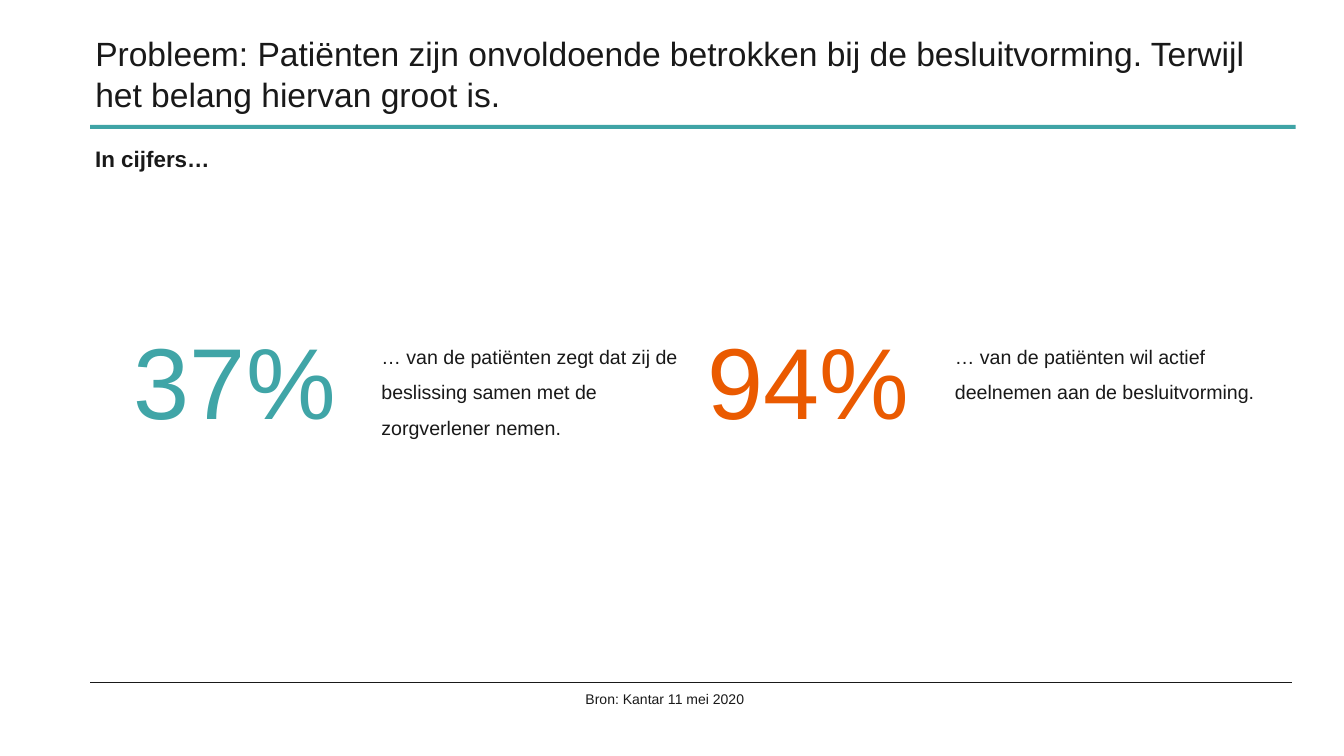
from lxml.etree import SubElement
from pptx import Presentation
from pptx.dml.color import RGBColor
from pptx.enum.shapes import MSO_CONNECTOR, MSO_SHAPE
from pptx.enum.text import MSO_ANCHOR, MSO_AUTO_SIZE, PP_ALIGN
from pptx.oxml.ns import qn
from pptx.util import Inches, Pt

WIDTH, HEIGHT = 26.67, 15
LEFT = 1.79
COLORS = {"ink": "191919", "rule": "3FA4A6", "teal": "40A5A7", "orange": "EA5A00"}
FIGURES = [
    ("37%", "teal", "… van de patiënten zegt dat zij de beslissing samen met de zorgverlener nemen.", 2.84),
    ("94%", "orange", "… van de patiënten wil actief deelnemen aan de besluitvorming.", 2.13),
]
FIGURE_LEFT, FIGURE_STEP, CAPTION_OFFSET = 2.56, 11.38, 4.91


class SlideBuilder:
    """Places styled elements by shares of the slide's width and height."""

    font = "Arial"

    def __init__(self, presentation):
        self.width, self.height = presentation.slide_width, presentation.slide_height
        self.slide = presentation.slides.add_slide(presentation.slide_layouts[5])

    def box(self, left, top, width, height):
        return (round(left * self.width), round(top * self.height),
                round(width * self.width), round(height * self.height))

    def color(self, name):
        return RGBColor.from_string(COLORS[name])

    def fill_text(self, shape, text, size, color="ink", bold=False, spacing=1.0):
        frame = shape.text_frame
        frame.text = text
        paragraph = frame.paragraphs[0]
        paragraph.alignment = PP_ALIGN.LEFT
        paragraph.line_spacing = spacing
        font = paragraph.runs[0].font
        font.name, font.size, font.bold = self.font, Pt(size), bold
        font.color.rgb = self.color(color)

    def title(self, text, box, size):
        shape = self.slide.shapes.title
        shape.left, shape.top, shape.width, shape.height = self.box(*box)
        self.fill_text(shape, text, size)
        shape.text_frame.auto_size = MSO_AUTO_SIZE.NONE
        shape.text_frame.vertical_anchor = MSO_ANCHOR.MIDDLE

    def text(self, text, box, size, wrap=True, **style):
        shape = self.slide.shapes.add_textbox(*self.box(*box))
        self.fill_text(shape, text, size, **style)
        shape.text_frame.word_wrap = wrap
        shape.text_frame.auto_size = MSO_AUTO_SIZE.SHAPE_TO_FIT_TEXT

    def bar(self, box, color):
        shape = self.slide.shapes.add_shape(MSO_SHAPE.RECTANGLE, *self.box(*box))
        shape.shadow.inherit = False
        shape.fill.solid()
        shape.fill.fore_color.rgb = self.color(color)
        shape.line.fill.background()

    def rule(self, box, color, weight):
        left, top, width, _ = self.box(*box)
        line = self.slide.shapes.add_connector(MSO_CONNECTOR.STRAIGHT, left, top, left + width, top)
        line.line.color.rgb = self.color(color)
        line.line.width = Pt(weight)
        SubElement(line._element.spPr, qn("a:effectLst"))


def share(left, top, width, height):
    """Turn inches into shares of the slide's size."""
    return left / WIDTH, top / HEIGHT, width / WIDTH, height / HEIGHT


def main():
    presentation = Presentation()
    presentation.slide_width, presentation.slide_height = Inches(WIDTH), Inches(HEIGHT)
    builder = SlideBuilder(presentation)

    builder.bar(share(LEFT, 2.48, 23.92, 0.08), "rule")
    builder.title(
        "Probleem: Patiënten zijn onvoldoende betrokken bij de besluitvorming. "
        "Terwijl het belang hiervan groot is.",
        share(LEFT, 0.57, 23.86, 1.78), 48)
    builder.text("In cijfers…", share(LEFT, 2.83, 18.27, 0.64), 32, bold=True)

    for column, (figure, color, caption, height) in enumerate(FIGURES):
        left = FIGURE_LEFT + column * FIGURE_STEP
        builder.text(figure, share(left, 6.28, 5.78, 2.52), 144, color=color)
        builder.text(caption, share(left + CAPTION_OFFSET, 6.56, 6.38, height), 28, spacing=1.5)

    builder.rule(share(LEFT, 13.54, 23.85, 0), "ink", 1)
    builder.text("Bron: Kantar 11 mei 2020", share(11.52, 13.66, 3.37, 0.44), 20, wrap=False)
    presentation.save("out.pptx")


if __name__ == "__main__":
    main()
